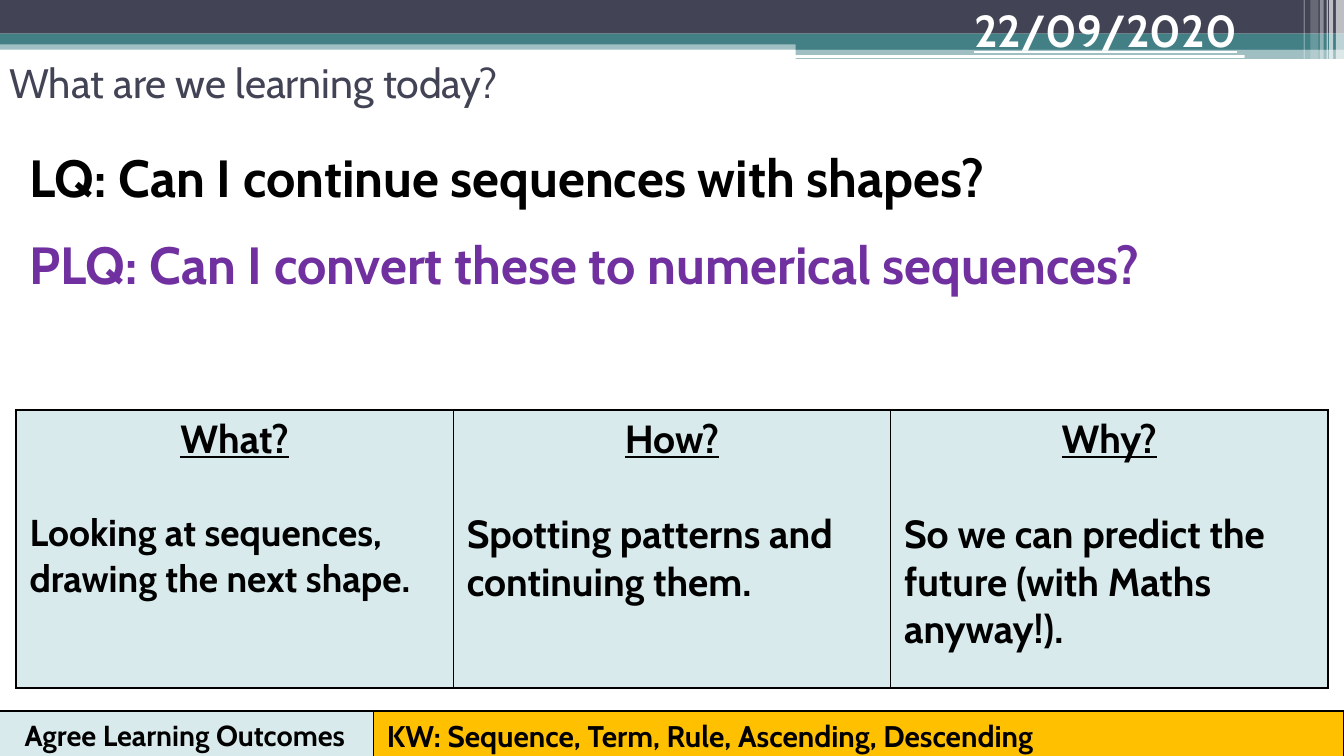
from lxml.etree import SubElement
from pptx import Presentation
from pptx.dml.color import RGBColor
from pptx.enum.shapes import MSO_SHAPE
from pptx.enum.text import MSO_ANCHOR, PP_ALIGN
from pptx.oxml.ns import qn
from pptx.util import Inches, Pt

FONT = "Cabin"
BLACK, WHITE, NAVY, TEAL = "000000", "FFFFFF", "424456", "438086"
PURPLE, PALE, AMBER = "7030A0", "D8EAEC", "FFC000"

BANDS = [
    (0, 0.3, 10, 0.07, TEAL, 50),
    (0, 0, 10, 0.25, NAVY, 100),
    (0, 0.25, 10, 0.08, TEAL, 100),
    (5.92, 0.3, 4.08, 0.07, TEAL, 100),
    (5.92, 0.36, 4.08, 0.15, TEAL, 50),
    (5.91, 0.41, 3.35, 0.02, WHITE, 100),
]
STRIPES = [
    (9.94, 0.06, 0.51, 65),
    (9.89, 0.03, 0.51, 65),
    (9.87, 0.01, 0.51, 60),
    (9.82, 0.03, 0.51, 40),
    (9.75, 0.06, 0.48, 20),
    (9.7, 0.01, 0.48, 30),
]
QUESTIONS = [
    ("LQ: Can I continue sequences with shapes?", BLACK),
    ("PLQ: Can I convert these to numerical sequences?", PURPLE),
]
FOOTERS = [
    (-0.03, 2.81, 0.36, PALE, "Agree Learning Outcomes", 15.5, PP_ALIGN.CENTER),
    (2.78, 7.22, 0.37, AMBER, "KW: Sequence, Term, Rule, Ascending, Descending", 16, PP_ALIGN.LEFT),
]
OUTCOMES = [
    ("What?", "Looking at sequences, drawing the next shape.", 20),
    ("How?", "Spotting patterns and continuing them.", 21),
    ("Why?", "So we can predict the future (with Maths anyway!).", 21),
]


def color(value):
    return RGBColor.from_string(value)


def write(para, text, size, fill=BLACK, bold=True, underline=False, align=PP_ALIGN.LEFT):
    para.text = text
    para.alignment = align
    font = para.runs[0].font
    font.name, font.size, font.bold, font.underline = FONT, Pt(size), bold, underline
    font.color.rgb = color(fill)


def add_box(left, top, width, height, fill, opacity=100, line=None, line_width=0.75, kind=MSO_SHAPE.RECTANGLE):
    box = page.shapes.add_shape(kind, Inches(left), Inches(top), Inches(width), Inches(height))
    box.shadow.inherit = False
    box.fill.solid()
    box.fill.fore_color.rgb = color(fill)
    if opacity < 100:
        tint = box.fill._xPr.find(qn("a:solidFill"))[0]
        SubElement(tint, qn("a:alpha")).set("val", str(opacity * 1000))
    if line:
        box.line.color.rgb = color(line)
        box.line.width = Pt(line_width)
    else:
        box.line.fill.background()
    return box


def add_text(left, top, width, height, anchor=MSO_ANCHOR.TOP):
    box = page.shapes.add_textbox(Inches(left), Inches(top), Inches(width), Inches(height))
    box.text_frame.word_wrap = True
    box.text_frame.vertical_anchor = anchor
    return box.text_frame


def add_borders(cell):
    properties = cell._tc.get_or_add_tcPr()
    for index, side in enumerate(("a:lnL", "a:lnR", "a:lnT", "a:lnB")):
        border = properties.makeelement(qn(side), {"w": str(Pt(1))})
        solid = SubElement(border, qn("a:solidFill"))
        SubElement(solid, qn("a:srgbClr")).set("val", BLACK)
        properties.insert(index, border)


deck = Presentation()
deck.slide_width = Inches(10)
deck.slide_height = deck.slide_width * 9 // 16
page = deck.slides.add_slide(deck.slide_layouts[6])

for left, top, width, height, fill, opacity in BANDS:
    kind = MSO_SHAPE.ROUNDED_RECTANGLE if fill == WHITE else MSO_SHAPE.RECTANGLE
    add_box(left, top, width, height, fill, opacity, kind=kind)
for left, width, height, opacity in STRIPES:
    add_box(left, 0, width, height, WHITE, opacity)

frame = add_text(0.12, 1.03, 10, 2.24)
for index, (text, fill) in enumerate(QUESTIONS):
    para = frame.add_paragraph() if index else frame.paragraphs[0]
    write(para, text, 28, fill)
    para.space_before = Pt(13 * index)

write(add_text(7.15, -0.03, 2.95, 0.4).paragraphs[0], "22/09/2020", 24, WHITE, underline=True)

for left, width, height, fill, text, size, align in FOOTERS:
    box = add_box(left, 5.29, width, height, fill, line=BLACK)
    box.text_frame.word_wrap = True
    box.text_frame.vertical_anchor = MSO_ANCHOR.MIDDLE
    write(box.text_frame.paragraphs[0], text, size, align=align)

add_box(5.87, 0.45, 4.13, 0.31, WHITE, line=WHITE, line_width=1.5)

table = page.shapes.add_table(
    1, len(OUTCOMES), Inches(0.12), Inches(3.05), Inches(9.76), Inches(2.07)
).table
table.first_row = table.horz_banding = False
for cell, (heading, answer, size) in zip(table.iter_cells(), OUTCOMES):
    cell.margin_left = cell.margin_right = Inches(0.1)
    cell.margin_top = cell.margin_bottom = Inches(0.04)
    cell.fill.solid()
    cell.fill.fore_color.rgb = color(PALE)
    add_borders(cell)
    para = cell.text_frame.paragraphs[0]
    write(para, heading, 21, underline=True, align=PP_ALIGN.CENTER)
    para.space_after = Pt(25.5)
    write(cell.text_frame.add_paragraph(), answer, size)

heading_frame = add_text(-0.03, 0.17, 9, 0.88, MSO_ANCHOR.MIDDLE)
write(heading_frame.paragraphs[0], "What are we learning today?", 22, NAVY, bold=False)

deck.save("out.pptx")
